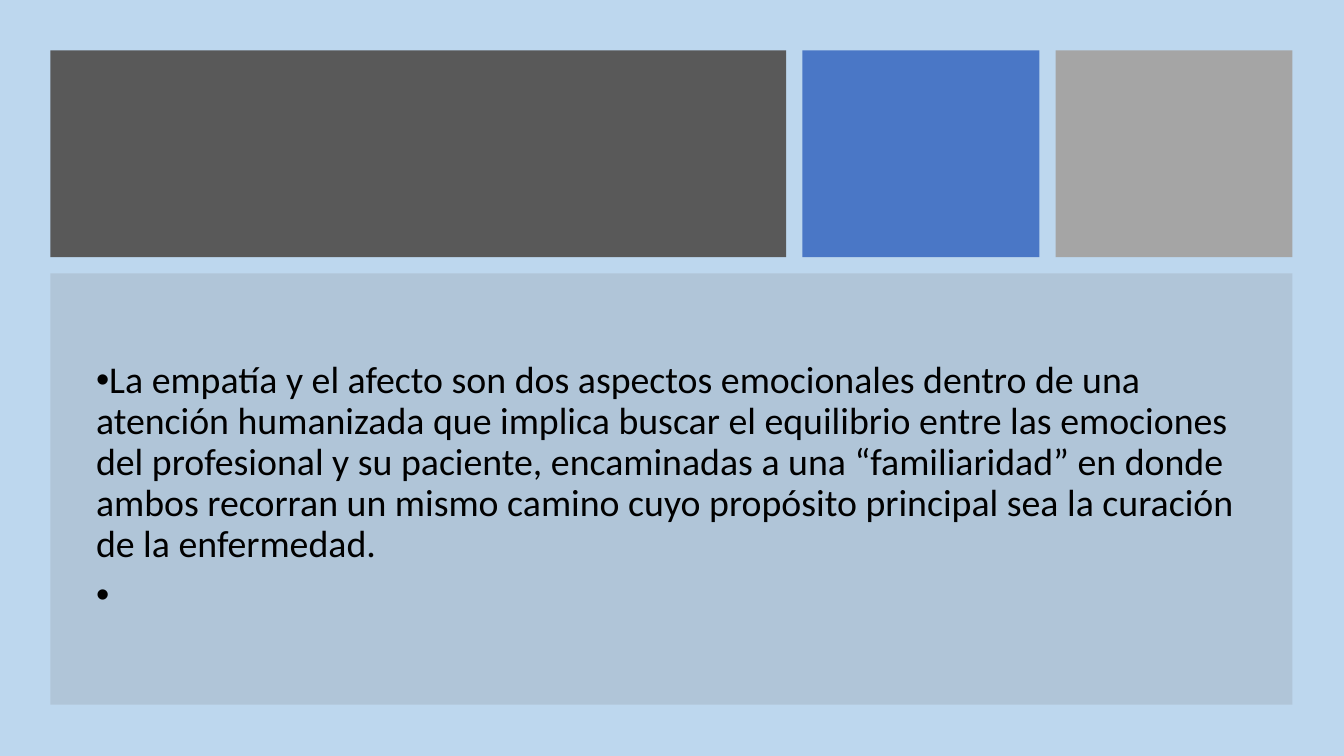
import pptx
import pptx.util
import pptx.dml.color
import pptx.enum.shapes
import pptx.enum.text
import pptx.oxml.ns
import lxml.etree

Pt = pptx.util.Pt

COLORS = {
    "sky": "BDD7EE",
    "dark": "595959",
    "blue": "4472C4",
    "silver": "A5A5A5",
    "gray": "808080",
    "black": "000000",
}
POINTS = [
    "La empatía y el afecto son dos aspectos emocionales dentro de una "
    "atención humanizada que implica buscar el equilibrio entre las emociones "
    "del profesional y su paciente, encaminadas a una “familiaridad” en donde "
    "ambos recorran un mismo camino cuyo propósito principal sea la curación "
    "de la enfermedad.",
    " ",
]
# Top row: width, color, opacity in percent
TILES = [(525.6, "dark", 100), (169.2, "blue", 95), (169.2, "silver", 100)]

WIDTH, HEIGHT = 960, 540
EDGE, GAP = 36, 11.6
ROW = 147.6
PAD = 25.5


def rgb(name):
    return pptx.dml.color.RGBColor.from_string(COLORS[name])


def add_block(slide, left, top, width, height, color, alpha=100):
    block = slide.shapes.add_shape(
        pptx.enum.shapes.MSO_SHAPE.RECTANGLE,
        Pt(left), Pt(top), Pt(width), Pt(height))
    block.shadow.inherit = False
    block.line.fill.background()
    block.fill.solid()
    block.fill.fore_color.rgb = rgb(color)
    if alpha < 100:
        tag = block._element.spPr.find(".//" + pptx.oxml.ns.qn("a:srgbClr"))
        lxml.etree.SubElement(tag, pptx.oxml.ns.qn("a:alpha"),
                              val=str(alpha * 1000))


def add_bullet(para, indent):
    props = para._p.get_or_add_pPr()
    props.set("marL", "0")
    props.set("indent", str(Pt(indent)))
    lxml.etree.SubElement(props, pptx.oxml.ns.qn("a:buFont"), typeface="Arial")
    lxml.etree.SubElement(props, pptx.oxml.ns.qn("a:buChar"), char="•")


def add_text(slide, lines, left, top, width, height, *, size, font="Calibri",
             color="black", spacing=0.9, after=8, indent=-18):
    frame = slide.shapes.add_textbox(
        Pt(left), Pt(top), Pt(width), Pt(height)).text_frame
    frame.word_wrap = True
    frame.vertical_anchor = pptx.enum.text.MSO_ANCHOR.MIDDLE
    for i, line in enumerate(lines):
        para = frame.add_paragraph() if i else frame.paragraphs[0]
        para.line_spacing = spacing
        para.space_after = Pt(after)
        add_bullet(para, indent)
        run = para.add_run()
        run.text = line
        run.font.size = Pt(size)
        run.font.name = font
        run.font.color.rgb = rgb(color)


def main():
    deck = pptx.Presentation()
    deck.slide_width, deck.slide_height = Pt(WIDTH), Pt(HEIGHT)
    slide = deck.slides.add_slide(deck.slide_layouts[6])
    slide.background.fill.solid()
    slide.background.fill.fore_color.rgb = rgb("sky")

    left = EDGE
    for width, color, alpha in TILES:
        add_block(slide, left, EDGE, width, ROW, color, alpha)
        left += width + GAP

    top = EDGE + ROW + GAP
    width, height = left - GAP - EDGE, 308.2
    add_block(slide, EDGE, top, width, height, "gray", 20)
    add_text(slide, POINTS, EDGE + PAD, top + PAD,
             width - 2 * PAD, height - 2 * PAD, size=27)

    deck.save("out.pptx")


if __name__ == "__main__":
    main()
